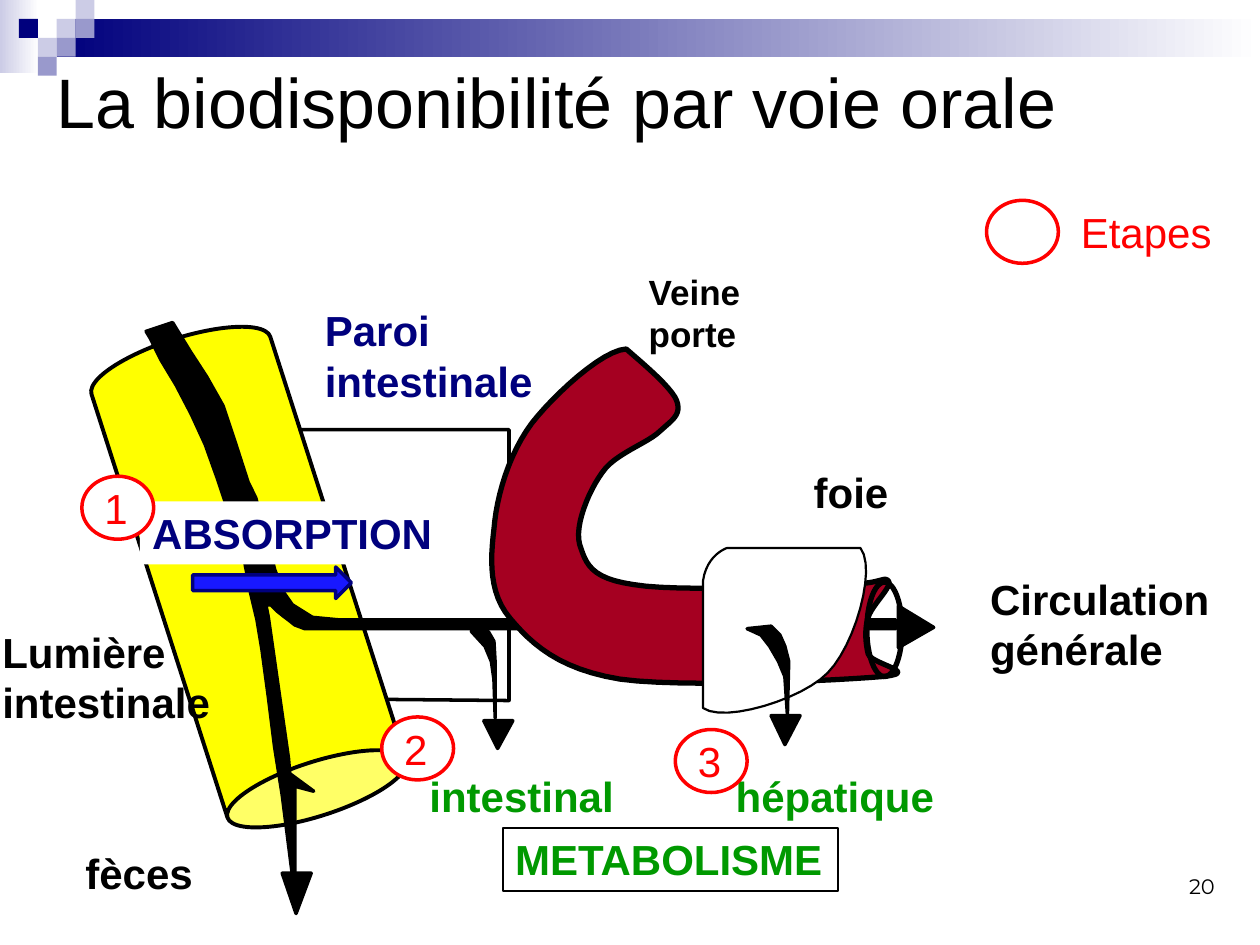
from dataclasses import dataclass
from typing import NamedTuple, Optional

from pptx import Presentation
from pptx.dml.color import RGBColor
from pptx.enum.shapes import MSO_SHAPE as Preset
from pptx.enum.text import MSO_ANCHOR as Anchor, PP_ALIGN as Align
from pptx.util import Cm, Pt


@dataclass(frozen=True)
class Theme:
    black: str = "000000"
    white: str = "FFFFFF"
    navy: str = "00007D"
    lilac: str = "CCCCE6"
    violet: str = "9999CC"
    yellow: str = "FFFF00"
    blood: str = "A50021"
    green: str = "009900"
    blue: str = "1818FF"
    red: str = "FF0000"
    font: str = "Arial"
    number_font: str = "Montserrat"
    title_size: int = 40
    label_size: int = 24
    small_size: int = 20
    number_size: int = 12


class Box(NamedTuple):
    left: float
    top: float
    width: float
    height: float


class Label(NamedTuple):
    text: str
    box: Box
    color: str
    size: int = 24
    wrap: bool = False


THEME = Theme()
Points = list[tuple[float, float]]


def inches(value: float) -> Cm:
    return Cm(value * 2.54)


def place(box: Box) -> list[Cm]:
    return [inches(value) for value in box]


def write(shape, text: str, *, color: str = THEME.black, size: int = THEME.label_size,
          font: str = THEME.font, bold: bool = False, wrap: bool = False,
          align=Align.LEFT, anchor=Anchor.TOP) -> None:
    frame = shape.text_frame
    frame.text = text
    frame.word_wrap = wrap
    frame.vertical_anchor = anchor
    for para in frame.paragraphs:
        para.alignment = align
        for span in para.runs:
            span.font.name, span.font.size, span.font.bold = font, Pt(size), bold
            span.font.color.rgb = RGBColor.from_string(color)


def paint(shape, fill: Optional[str], line: Optional[str] = None, weight: float = 2):
    shape.shadow.inherit = False
    if fill:
        shape.fill.solid()
        shape.fill.fore_color.rgb = RGBColor.from_string(fill)
    else:
        shape.fill.background()
    if line:
        shape.line.color.rgb = RGBColor.from_string(line)
        shape.line.width = Pt(weight)
    else:
        shape.line.fill.background()
    return shape


def add_preset(page, preset, box: Box, fill: Optional[str],
               line: Optional[str] = None, weight: float = 2):
    return paint(page.shapes.add_shape(preset, *place(box)), fill, line, weight)


def add_fade(page, box: Box, color: str) -> None:
    """Rectangle that fades to white from left to right."""
    fill = add_preset(page, Preset.RECTANGLE, box, color).fill
    fill.gradient()
    fill.gradient_angle = 0
    for stop, shade in zip(fill.gradient_stops, (color, THEME.white)):
        stop.color.rgb = RGBColor.from_string(shade)


def add_outline(page, points: Points, fill: str = THEME.black, weight: float = 2) -> None:
    start, *rest = [(inches(x), inches(y)) for x, y in points]
    builder = page.shapes.build_freeform(*start, scale=1.0)
    builder.add_line_segments(rest, close=True)
    paint(builder.convert_to_shape(), fill, THEME.black, weight)


def curve(start: tuple[float, float], *segments: tuple, steps: int = 12) -> Points:
    """Points along a chain of cubic curves; a pair of numbers is a straight line."""
    points = [start]
    for segment in segments:
        if len(segment) == 2:
            points.append(segment)
            continue
        (x0, y0), (x1, y1, x2, y2, x3, y3) = points[-1], segment
        for step in range(1, steps + 1):
            t = step / steps
            u = 1 - t
            a, b, c, d = u ** 3, 3 * u * u * t, 3 * u * t * t, t ** 3
            points.append((a * x0 + b * x1 + c * x2 + d * x3,
                           a * y0 + b * y1 + c * y2 + d * y3))
    return points


def add_down_head(page, left: float, top: float, height: float) -> None:
    add_outline(page, [(left + 0.23, top), (left, top), (left + 0.11, top + height)])


def add_text(page, text: str, box: Box, **style) -> None:
    write(page.shapes.add_textbox(*place(box)), text, **style)


def add_step(page, left: float, top: float, number: str = "") -> None:
    add_preset(page, Preset.OVAL, Box(left, top, 0.57, 0.5), THEME.white, THEME.red)
    if number:
        add_text(page, number, Box(left + 0.08, top, 0.39, 0.5), color=THEME.red)


WALL = [(2.34, 3.41), (4.04, 3.41), (4.04, 5.56), (2.94, 5.55), (2.76, 5.02),
        (2.6, 4.38), (2.5, 3.93), (2.41, 3.65)]
DRUG_FLOW = [
    (1.37, 2.56), (1.4, 2.61), (1.51, 2.79), (1.64, 2.99), (1.77, 3.22), (1.87, 3.52),
    (1.97, 3.83), (2.03, 3.95), (2.06, 4.07), (2.08, 4.14), (2.1, 4.18), (2.18, 4.52),
    (2.25, 4.7), (2.32, 4.8), (2.48, 4.9), (2.69, 4.92), (7.11, 4.92), (7.11, 4.99),
    (2.42, 4.99), (2.34, 4.96), (2.29, 4.92), (2.25, 4.89), (2.2, 4.85), (2.15, 4.8),
    (2.11, 4.8), (2.13, 4.9), (2.29, 6.02), (2.3, 6.14), (2.49, 6.28), (2.34, 6.24),
    (2.34, 6.92), (2.32, 6.94), (2.24, 6.31), (2.18, 5.93), (2.13, 5.53), (2.08, 5.16),
    (2.04, 4.92), (1.99, 4.71), (1.94, 4.45), (1.84, 4.11), (1.8, 4.02), (1.73, 3.81),
    (1.63, 3.53), (1.52, 3.29), (1.4, 3.06), (1.28, 2.86), (1.19, 2.68), (1.16, 2.63)]
PORTAL_VEIN = curve(
    (4.97, 2.77), (4.78, 2.78, 4.4, 3.13, 4.22, 3.36), (4.04, 3.6, 3.94, 3.94, 3.92, 4.2),
    (3.89, 4.45, 3.88, 4.71, 4.05, 4.91), (4.22, 5.11, 4.43, 5.31, 4.92, 5.39),
    (5.41, 5.46, 6.67, 5.4, 7, 5.37), (7.33, 5.34, 6.91, 5.27, 6.89, 5.19),
    (6.87, 5.11, 6.86, 4.99, 6.89, 4.9), (6.92, 4.8, 7.09, 4.65, 7.05, 4.61),
    (7.01, 4.57, 7, 4.64, 6.67, 4.64), (6.33, 4.65, 5.37, 4.7, 5.03, 4.64),
    (4.68, 4.59, 4.65, 4.47, 4.6, 4.32), (4.56, 4.17, 4.67, 3.9, 4.78, 3.75),
    (4.88, 3.6, 5.14, 3.52, 5.24, 3.42), (5.34, 3.33, 5.41, 3.29, 5.37, 3.18),
    (5.33, 3.07, 5.06, 2.85, 4.97, 2.77))
LIVER = curve(
    (5.77, 4.35), (6.83, 4.35), (6.96, 4.52, 6.78, 5.13, 6.57, 5.34),
    (6.37, 5.55, 5.75, 5.74, 5.58, 5.62), (5.58, 4.61), (5.61, 4.4, 5.77, 4.35, 5.77, 4.35))
GUT_BRANCH = [(3.74, 5.01), (3.85, 5.13), (3.9, 5.25), (3.92, 5.39), (3.93, 5.7),
              (3.93, 5.27), (3.92, 5.09), (3.88, 5.02), (3.85, 4.99)]
LIVER_BRANCH = [(5.93, 4.99), (6.04, 5.04), (6.11, 5.13), (6.18, 5.25), (6.23, 5.37),
                (6.25, 5.67), (6.26, 5.25), (6.23, 5.13), (6.19, 5.04), (6.12, 4.97)]
LABELS = [
    Label("Lumière\nintestinale", Box(-0.08, 4.92, 2.04, 0.91), THEME.black, wrap=True),
    Label("Paroi\nintestinale", Box(2.48, 2.37, 1.86, 0.91), THEME.navy),
    Label("Veine porte", Box(5.05, 2.1, 1.1, 0.77), THEME.black, THEME.small_size, True),
    Label("Circulation\ngénérale", Box(7.76, 4.5, 1.96, 0.91), THEME.black),
    Label("intestinal", Box(3.31, 6.07, 1.68, 0.5), THEME.green),
    Label("hépatique", Box(5.74, 6.07, 1.79, 0.5), THEME.green),
    Label("fèces", Box(0.58, 6.68, 1.06, 0.5), THEME.black),
    Label("foie", Box(6.36, 3.65, 0.8, 0.5), THEME.black)]


def add_banner(page) -> None:
    add_fade(page, Box(0, 0, 0.31, 0.58), THEME.lilac)
    add_fade(page, Box(0.45, 0.15, 9.55, 0.3), THEME.navy)
    tiles = {THEME.lilac: [(3, 1), (4, 0), (2, 2)],
             THEME.violet: [(4, 1), (3, 2), (2, 3)], THEME.navy: [(1, 1)]}
    for color, cells in tiles.items():
        for column, row in cells:
            add_preset(page, Preset.RECTANGLE,
                       Box(0.15 * column, 0.15 * row, 0.15, 0.15), color)


def main() -> None:
    deck = Presentation()
    deck.slide_width, deck.slide_height = inches(10), inches(7.5)
    page = deck.slides.add_slide(deck.slide_layouts[5])
    add_banner(page)

    # Title
    title = page.shapes.title
    title.left, title.top, title.width, title.height = place(Box(0.35, 0.13, 8.56, 1.34))
    write(title, "La biodisponibilité par voie orale", size=THEME.title_size,
          wrap=True, anchor=Anchor.MIDDLE)

    # Intestine, drug flow and portal vein
    add_outline(page, WALL, THEME.white)
    gut = add_preset(page, Preset.CAN, Box(1.23, 2.6, 1.49, 3.96),
                     THEME.yellow, THEME.black, 2.25)
    gut.rotation = 162.2
    gut.adjustments[0] = 0.289
    add_outline(page, DRUG_FLOW)
    add_outline(page, PORTAL_VEIN, THEME.blood, 3)
    add_outline(page, GUT_BRANCH)
    add_down_head(page, 3.84, 5.72, 0.22)
    add_down_head(page, 2.24, 6.93, 0.32)

    # Liver and way out to the circulation
    add_preset(page, Preset.OVAL, Box(6.88, 4.62, 0.28, 0.75), None, THEME.black, 3)
    add_outline(page, LIVER, THEME.white, 1.25)
    add_outline(page, LIVER_BRANCH)
    add_down_head(page, 6.12, 5.68, 0.23)
    add_outline(page, [(7.13, 4.81), (7.13, 5.14), (7.41, 4.98)])

    # Labels
    for label in LABELS:
        add_text(page, label.text, label.box, color=label.color, size=label.size,
                 bold=True, wrap=label.wrap)
    metabolism = add_preset(page, Preset.RECTANGLE, Box(3.99, 6.57, 2.66, 0.5),
                            None, THEME.black, 1)
    write(metabolism, "METABOLISME", color=THEME.green, bold=True)
    absorption = add_preset(page, Preset.RECTANGLE, Box(1.11, 3.98, 2.44, 0.5), THEME.white)
    write(absorption, "ABSORPTION", color=THEME.navy, bold=True)
    add_preset(page, Preset.RIGHT_ARROW, Box(1.53, 4.5, 1.26, 0.25), THEME.blue, THEME.navy)

    # Steps, their key and the page number
    for number, (left, top) in enumerate([(0.65, 3.78), (3.03, 5.69), (5.36, 5.79)], 1):
        add_step(page, left, top, str(number))
    add_step(page, 7.83, 1.59)
    add_text(page, "Etapes", Box(8.48, 1.59, 1.25, 0.5), color=THEME.red)
    add_text(page, "20", Box(7.41, 6.68, 2.33, 0.5), size=THEME.number_size,
             font=THEME.number_font, wrap=True, align=Align.RIGHT, anchor=Anchor.BOTTOM)
    deck.save("out.pptx")


if __name__ == "__main__":
    main()
